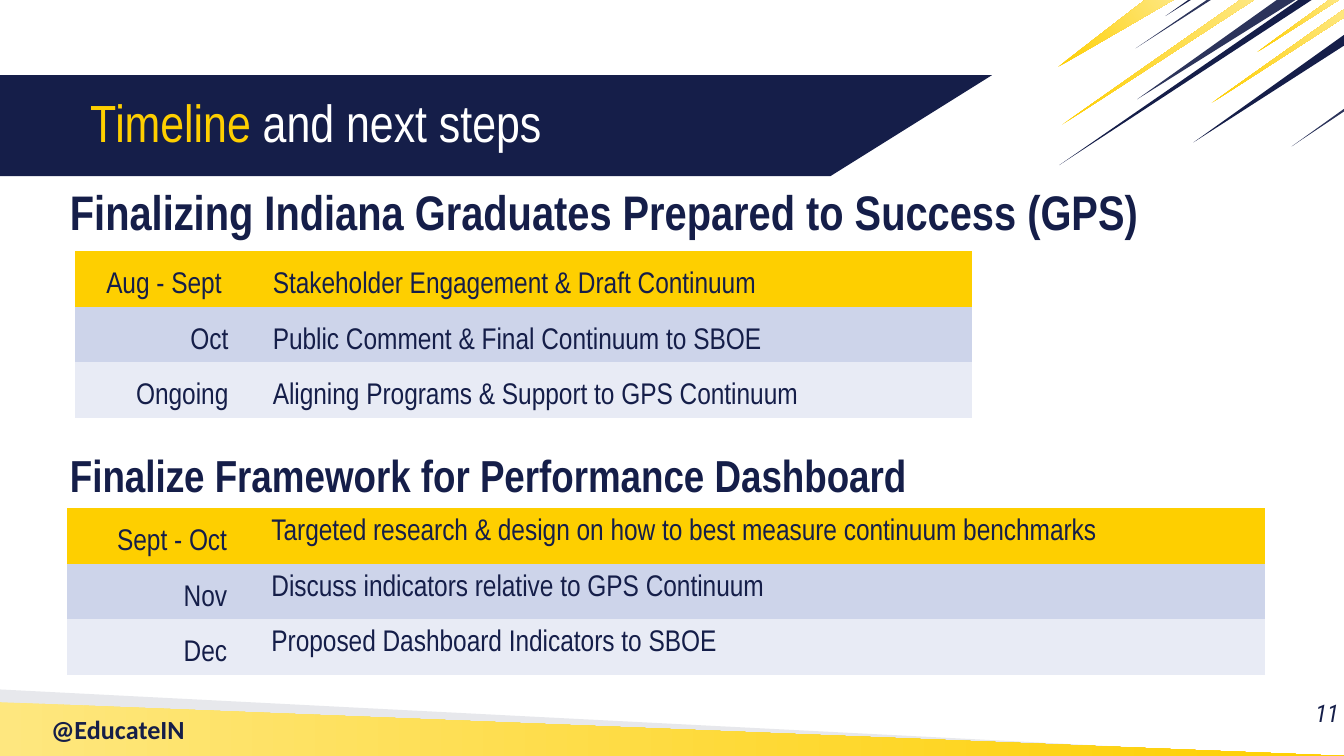
from lxml.etree import SubElement
from pptx import Presentation
from pptx.dml.color import RGBColor
from pptx.enum.text import MSO_ANCHOR, PP_ALIGN
from pptx.oxml.ns import qn
from pptx.util import Inches, Pt

NAVY = RGBColor(0x15, 0x1E, 0x49)
SLATE = RGBColor(0x2C, 0x34, 0x5B)
GOLD = RGBColor(0xFE, 0xCF, 0x00)
PALE = RGBColor(0xFE, 0xE7, 0x7F)
GRAY = RGBColor(0xE7, 0xE8, 0xEC)
WHITE = RGBColor(0xFF, 0xFF, 0xFF)
BANDS = [GOLD, RGBColor(0xCD, 0xD4, 0xEA), RGBColor(0xE8, 0xEB, 0xF5)]
PLAIN = "{2D5ABB26-0587-4C30-8999-92F81FD0307C}"  # no style, no grid
NARROW = "Arial Narrow"
WIDE = 10
HIGH = WIDE * 9 / 16


def apply(item, values):
    for name, value in values.items():
        setattr(item, name, value)


def add_run(para, text, size, color=NAVY, face=NARROW, **more):
    run = para.add_run()
    run.text = text
    apply(run.font, {"name": face, "size": Pt(size), **more})
    run.font.color.rgb = color


def set_frame(shape, box, inset, anchor=MSO_ANCHOR.TOP):
    """Place a text shape and return its frame."""
    apply(shape, dict(zip(("left", "top", "width", "height"), map(Inches, box))))
    frame = shape.text_frame
    sides = ("margin_left", "margin_top", "margin_right", "margin_bottom")
    apply(frame, dict.fromkeys(sides, Inches(inset)))
    apply(frame, {"word_wrap": True, "vertical_anchor": anchor})
    return frame


def add_shard(slide, left, top, points, fill, angle=0):
    """Draw a polygon; a pair of colours makes a gradient."""
    spots = [(Inches(left + x), Inches(top + y)) for x, y in points]
    pen = slide.shapes.build_freeform(*spots[0], scale=1.0)
    pen.add_line_segments(spots[1:], close=True)
    shard = pen.convert_to_shape()
    shard.shadow.inherit = False
    shard.line.fill.background()
    if isinstance(fill, RGBColor):
        shard.fill.solid()
        shard.fill.fore_color.rgb = fill
    else:
        shard.fill.gradient()
        shard.fill.gradient_angle = angle
        for stop, color in zip(shard.fill.gradient_stops, fill):
            stop.color.rgb = color


def add_streaks(slide, left, top):
    glow = (GOLD, PALE)
    streaks = [
        (glow, [(1.48, 0.39), (2.09, 0), (2.02, 0)]),
        (NAVY, [(0.01, 1.23), (1.89, 0), (1.79, 0)]),
        (glow, [(0.65, 0), (0, 0.5), (0.86, 0)]),
        (glow, [(2.13, 0.13), (2.13, 0.07), (1.14, 0.77)]),
        (SLATE, [(1.77, 0), (1.63, 0), (0.59, 0.74)]),
        (NAVY, [(1.01, 1.06), (2.13, 0.34), (2.13, 0.26)]),
        (SLATE, [(2.13, 0.83), (2.13, 0.81), (1.74, 1.09)]),
        (NAVY, [(0.8, 0.12), (0.99, 0), (0.97, 0)]),
        (glow, [(0.03, 0.93), (1.46, 0), (1.36, 0)]),
        (SLATE, [(0.58, 0.36), (1.14, 0), (1.11, 0)]),
    ]
    for fill, points in streaks:
        add_shard(slide, left, top, points, fill, 35)


def add_banner(slide, left, top, width, height):
    points = [(0, 0), (0, height), (width - 1.2, height), (width, 0)]
    add_shard(slide, left, top, points, NAVY)
    title = slide.shapes.title
    slide.shapes._spTree.append(title._element)  # in front of the banner
    box = (left + 0.67, top, 5.76, height)
    para = set_frame(title, box, 0, MSO_ANCHOR.MIDDLE).paragraphs[0]
    apply(para, {"alignment": PP_ALIGN.LEFT, "line_spacing": 0.9})
    add_run(para, "Timeline ", 28, GOLD)
    add_run(para, "and next steps", 28, WHITE)


def add_footer(slide, left, top, width, height):
    low = top + height
    add_shard(slide, left, top, [(0, 0), (0, height), (8.9, height - 0.04)], GRAY)
    add_shard(slide, left, low - 0.4, [(0, 0), (0, 0.4), (width, 0.4)], (PALE, GOLD))
    # Handle
    note = slide.shapes.add_textbox(0, 0, 0, 0)
    frame = set_frame(note, (left + 0.33, top + 0.13, 2.04, 0.2), 0.05)
    add_run(frame.paragraphs[0], "@EducateIN", 14, face="Calibri", bold=True)
    # Page number
    page = slide.shapes.add_textbox(0, 0, 0, 0)
    frame = set_frame(page, (left + width - 0.64, low - 0.43, 0.6, 0.43), 0)
    frame.paragraphs[0].alignment = PP_ALIGN.RIGHT
    add_run(frame.paragraphs[0], "11", 13, face="Roboto Condensed", italic=True)


def add_heads(slide, box, heads):
    body = slide.placeholders[1]
    slide.shapes._spTree.append(body._element)
    frame = set_frame(body, box, 0.07)
    for i, (text, size, gap) in enumerate(heads):
        para = frame.add_paragraph() if i else frame.paragraphs[0]
        props = para._p.get_or_add_pPr()
        apply(para, {"line_spacing": 1.15, "space_before": Pt(gap)})
        props.set("marL", "0")
        props.set("indent", "0")
        SubElement(props, qn("a:buNone"))
        add_run(para, text, size, bold=True)


def add_plan(slide, left, top, widths, rows, pitch):
    """Add a table of dates and steps; pitch spaces the step lines."""
    size = (sum(widths), 0.41 * len(rows))
    frame = slide.shapes.add_table(
        len(rows), 2, *map(Inches, (left, top, *size)))
    table = frame.table
    apply(table, {"first_row": False, "horz_banding": False})
    table._tbl.tblPr[0].text = PLAIN
    for col, width in zip(table.columns, widths):
        col.width = Inches(width)
    for r, (row, band) in enumerate(zip(rows, BANDS)):
        for c, text in enumerate(row):
            cell = table.cell(r, c)
            cell.fill.solid()
            cell.fill.fore_color.rgb = band
            para = cell.text_frame.paragraphs[0]
            if c:
                para.line_spacing = pitch
                para._p.get_or_add_pPr().set("marL", str(Inches(0.13)))
            else:
                apply(para, {"line_spacing": 1.5, "alignment": PP_ALIGN.RIGHT})
            add_run(para, text, 16)


def main():
    deck = Presentation()
    apply(deck, {"slide_width": Inches(WIDE), "slide_height": Inches(HIGH)})
    slide = deck.slides.add_slide(deck.slide_layouts[1])
    add_streaks(slide, 7.87, 0)
    add_footer(slide, 0, 5.13, WIDE, HIGH - 5.13)
    add_banner(slide, 0, 0.56, 7.38, 0.75)
    add_heads(slide, (0.45, 1.22, 8.92, 3.96), [
        ("Finalizing Indiana Graduates Prepared to Success (GPS)", 26, 0),
        ("Finalize Framework for Performance Dashboard", 24, 107),
    ])
    add_plan(slide, 0.56, 1.87, (1.24, 5.43), [
        ("Aug - Sept ", "Stakeholder Engagement & Draft Continuum"),
        ("Oct", "Public Comment & Final Continuum to SBOE"),
        ("Ongoing", "Aligning Programs & Support to GPS Continuum"),
    ], 1.5)
    add_plan(slide, 0.5, 3.78, (1.29, 7.62), [
        ("Sept - Oct", "Targeted research & design on how to best measure continuum benchmarks"),
        ("Nov", "Discuss indicators relative to GPS Continuum"),
        ("Dec", "Proposed Dashboard Indicators to SBOE"),
    ], 1.15)
    deck.save("out.pptx")


if __name__ == "__main__":
    main()
